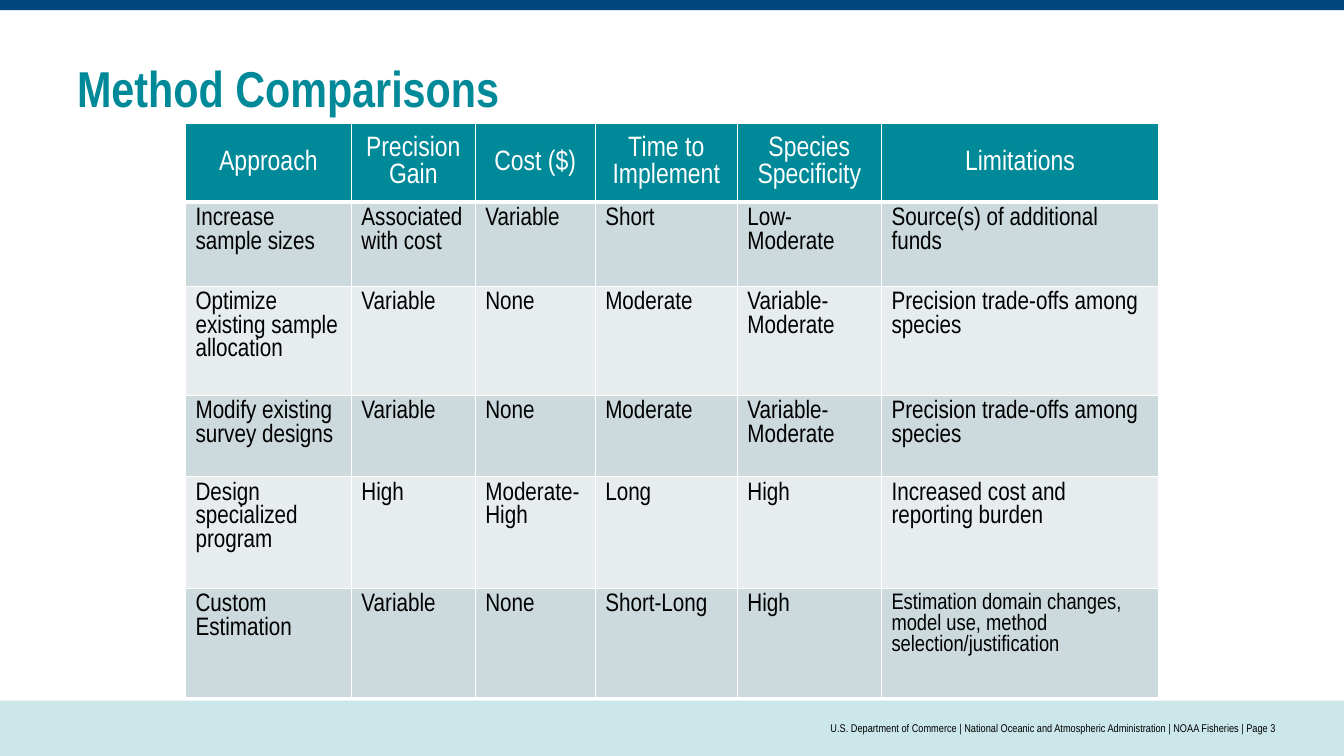
from lxml.etree import SubElement
from pptx import Presentation
from pptx.dml.color import RGBColor
from pptx.enum.shapes import MSO_SHAPE
from pptx.enum.text import MSO_ANCHOR, PP_ALIGN
from pptx.oxml.ns import qn
from pptx.util import Pt

HEADERS = ["Approach", "Precision Gain", "Cost ($)", "Time to Implement",
           "Species Specificity", "Limitations"]
METHODS = [
    ["Increase sample sizes", "Associated with cost", "Variable", "Short",
     "Low-Moderate", "Source(s) of additional funds"],
    ["Optimize existing sample allocation", "Variable", "None", "Moderate",
     "Variable-Moderate", "Precision trade-offs among species"],
    ["Modify existing survey designs", "Variable", "None", "Moderate",
     "Variable-Moderate", "Precision trade-offs among species"],
    ["Design specialized program", "High", "Moderate-High", "Long",
     "High", "Increased cost and reporting burden"],
    ["Custom Estimation", "Variable", "None", "Short-Long", "High",
     "Estimation domain changes, model use, method selection/justification"],
]
COLUMN_WIDTHS = [118.5, 88.5, 85.7, 101.5, 103, 198]
ROW_HEIGHTS = [56.5, 60, 77.8, 58.3, 79.9, 77.8]
FOOTER = ("U.S. Department of Commerce | National Oceanic and Atmospheric "
          "Administration | NOAA Fisheries | Page 3")


def color(value):
    return RGBColor.from_string(value)


class SlideBuilder:
    font_name = "Arial Narrow"
    teal = "008998"
    navy = "00467F"
    pale = "CCE7EA"
    white = "FFFFFF"
    black = "000000"
    bands = ["CCDADD", "E7EDEF"]

    def __init__(self, page):
        self.page = page

    def bar(self, top, height, fill):
        shape = self.page.shapes.add_shape(
            MSO_SHAPE.RECTANGLE, 0, Pt(top), Pt(960), Pt(height))
        shape.shadow.inherit = False
        shape.fill.solid()
        shape.fill.fore_color.rgb = color(fill)
        shape.line.fill.background()

    def style(self, paragraph, size, ink, bold=False, align=PP_ALIGN.LEFT):
        paragraph.alignment = align
        font = paragraph.font
        font.name = self.font_name
        font.size = Pt(size)
        font.bold = bold
        font.color.rgb = color(ink)

    def text(self, words, left, top, width, height, size, ink,
             bold=False, align=PP_ALIGN.LEFT, inset=7.2):
        box = self.page.shapes.add_textbox(Pt(left), Pt(top), Pt(width), Pt(height))
        frame = box.text_frame
        frame.word_wrap = True
        frame.vertical_anchor = MSO_ANCHOR.MIDDLE
        frame.margin_left = frame.margin_right = Pt(inset)
        frame.text = words
        self.style(frame.paragraphs[0], size, ink, bold, align)

    def borders(self, cell, bottom_width):
        properties = cell._tc.get_or_add_tcPr()
        for side, width in zip("LRTB", [1, 1, 1, bottom_width]):
            line = SubElement(properties, qn(f"a:ln{side}"), w=str(Pt(width)))
            fill = SubElement(line, qn("a:solidFill"))
            SubElement(fill, qn("a:srgbClr"), val=self.white)

    def cell(self, cell, words, fill, size, ink, header):
        self.borders(cell, 3 if header else 1)
        cell.fill.solid()
        cell.fill.fore_color.rgb = color(fill)
        cell.vertical_anchor = MSO_ANCHOR.MIDDLE if header else MSO_ANCHOR.TOP
        cell.text = words
        align = PP_ALIGN.CENTER if header else PP_ALIGN.LEFT
        self.style(cell.text_frame.paragraphs[0], size, ink, align=align)

    def table(self, left, top, rows, widths, heights):
        table = self.page.shapes.add_table(
            len(rows), len(widths), Pt(left), Pt(top),
            Pt(sum(widths)), Pt(sum(heights))).table
        for column, width in zip(table.columns, widths):
            column.width = Pt(width)
        for row, height in zip(table.rows, heights):
            row.height = Pt(height)
        for row_index, row in enumerate(rows):
            header = row_index == 0
            fill = self.teal if header else self.bands[(row_index - 1) % 2]
            ink = self.white if header else self.black
            for column_index, words in enumerate(row):
                size = 20 if header else 16 if len(words) > 40 else 18
                self.cell(table.cell(row_index, column_index), words,
                          fill, size, ink, header)


def main():
    deck = Presentation()
    deck.slide_width, deck.slide_height = Pt(960), Pt(540)
    builder = SlideBuilder(deck.slides.add_slide(deck.slide_layouts[6]))
    builder.bar(500.4, 39.6, builder.pale)
    builder.bar(0, 7.2, builder.navy)
    builder.text("Method Comparisons", 48, 36, 864, 53.3, 36, builder.teal, bold=True)
    builder.table(132.5, 88, [HEADERS] + METHODS, COLUMN_WIDTHS, ROW_HEIGHTS)
    builder.text(FOOTER, 240, 500.4, 672, 39.6, 8, builder.black,
                 align=PP_ALIGN.RIGHT, inset=0)
    deck.save("out.pptx")


if __name__ == "__main__":
    main()
